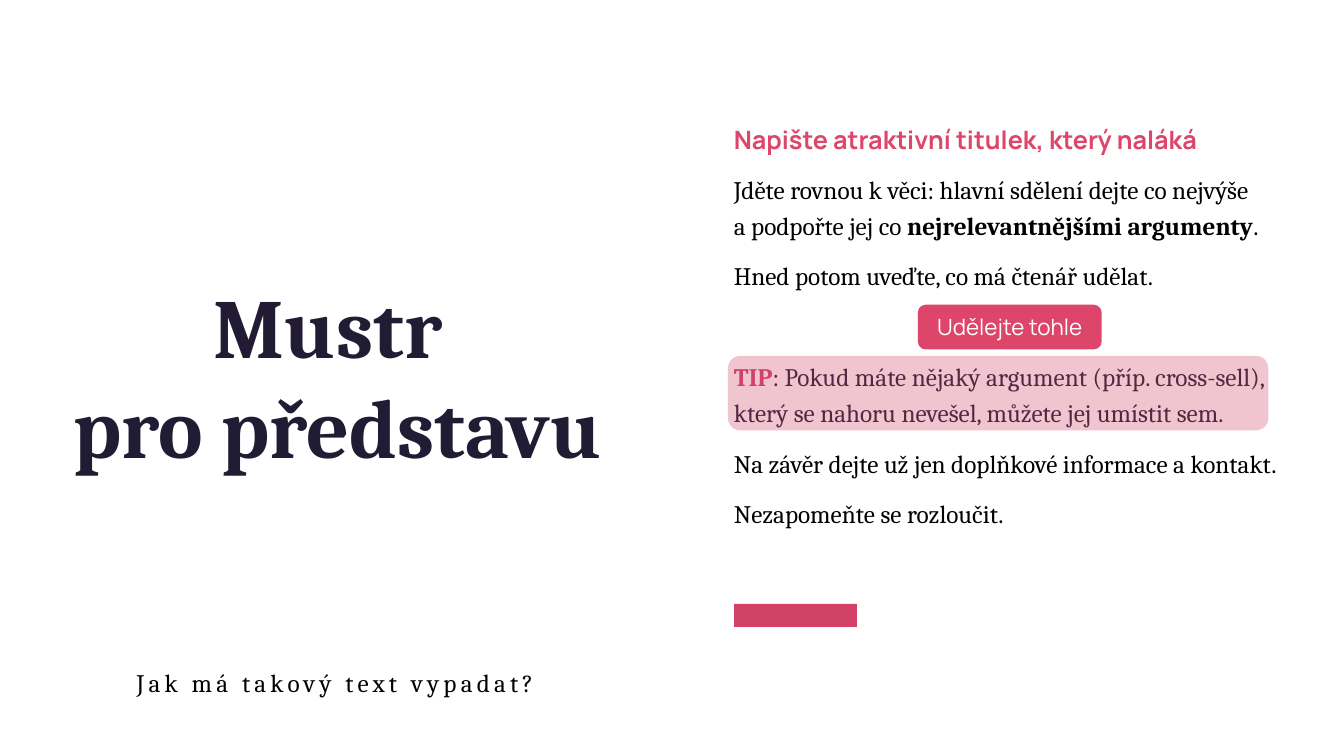
from dataclasses import dataclass

from lxml import etree
from pptx import Presentation
from pptx.dml.color import RGBColor
from pptx.enum.shapes import MSO_SHAPE as Shape
from pptx.enum.text import MSO_ANCHOR as Anchor, PP_ALIGN as Align
from pptx.oxml.ns import qn
from pptx.util import Inches, Pt

COLORS = {
    "pink": "DD456A",
    "rose": "D24166",
    "navy": "211C33",
    "ink": "201C33",
    "black": "000000",
    "white": "FFFFFF",
}


@dataclass(frozen=True)
class Run:
    text: str
    color: str = "black"
    bold: bool = False
    size: float = 18
    font: str = "Cambria"
    tracking: float = 0


@dataclass(frozen=True)
class Para:
    runs: tuple[Run, ...]
    align: Align = Align.LEFT
    spacing: float = 1.2
    before: float = 10


@dataclass(frozen=True)
class Box:
    left: float
    top: float
    width: float
    height: float
    paras: tuple[Para, ...] = ()
    anchor: Anchor = Anchor.TOP


@dataclass(frozen=True)
class Panel:
    box: Box
    color: str
    opacity: int = 100
    outlined: bool = False
    kind: Shape = Shape.ROUNDED_RECTANGLE


SECTION_GAP = 46  # one line more than the usual gap

TITLE = Box(0.49, 1, 5.71, 5.44, (
    Para((Run("Mustr \npro představu", "navy", True, 60),), Align.CENTER, 1, 0),
), Anchor.MIDDLE)

SUBTITLE = Box(0.49, 6.6, 5.67, 0.41, (
    Para((Run("Jak má takový text vypadat?", tracking=3),), Align.CENTER, 0.9, 0),
))

SAMPLE = Box(7.18, 1.03, 5.67, 5.98, (
    Para((Run("Napište atraktivní titulek, který naláká", "pink", True, font="Manrope"),),
         spacing=1.5, before=0),
    Para((Run("Jděte rovnou k věci: hlavní sdělení dejte co nejvýše \na podpořte jej co "),
          Run("nejrelevantnějšími argumenty", bold=True),
          Run("."))),
    Para((Run("Hned potom uveďte, co má čtenář udělat."),)),
    Para((Run("TIP", "rose", True),
          Run(": Pokud máte nějaký argument (příp. cross-sell),\n"
              "který se nahoru nevešel, můžete jej umístit sem.", "ink")),
         before=SECTION_GAP),
    Para((Run("Na závěr dejte už jen doplňkové informace a kontakt."),)),
    Para((Run("Nezapomeňte se rozloučit."),)),
))

TIP_PANEL = Panel(Box(7.22, 3.53, 5.36, 0.74), "rose", opacity=30)

SIGNATURE = Panel(Box(7.28, 5.99, 1.22, 0.23), "rose", kind=Shape.RECTANGLE)

BUTTON = Panel(Box(9.11, 3.03, 1.81, 0.43, (
    Para((Run("Udělejte tohle", "white", size=16, font="Manrope"),), Align.CENTER, 1, 0),
), Anchor.MIDDLE), "pink", outlined=True)


def rgb(name: str) -> RGBColor:
    return RGBColor.from_string(COLORS[name])


def bounds(box: Box) -> tuple:
    return tuple(Inches(v) for v in (box.left, box.top, box.width, box.height))


def add_run(p, run: Run) -> None:
    """Add the run's text, with a line break at each newline."""
    for i, line in enumerate(run.text.split("\n")):
        if i:
            p.add_line_break()
        r = p.add_run()
        r.text = line
        formats = {"name": run.font, "size": Pt(run.size), "bold": run.bold}
        for key, value in formats.items():
            setattr(r.font, key, value)
        r.font.color.rgb = rgb(run.color)
        if run.tracking:
            r._r.get_or_add_rPr().set("spc", str(round(run.tracking * 100)))


def fill_text(tf, box: Box) -> None:
    tf.word_wrap = True
    tf.vertical_anchor = box.anchor
    for i, para in enumerate(box.paras):
        p = tf.add_paragraph() if i else tf.paragraphs[0]
        formats = {
            "alignment": para.align,
            "line_spacing": para.spacing,
            "space_before": Pt(para.before),
        }
        for key, value in formats.items():
            setattr(p, key, value)
        for run in para.runs:
            add_run(p, run)


def add_text(s, box: Box) -> None:
    fill_text(s.shapes.add_textbox(*bounds(box)).text_frame, box)


def add_panel(s, panel: Panel) -> None:
    sp = s.shapes.add_shape(panel.kind, *bounds(panel.box))
    sp.shadow.inherit = False
    sp.fill.solid()
    sp.fill.fore_color.rgb = rgb(panel.color)
    if panel.opacity < 100:
        color = sp._element.spPr.find(qn("a:solidFill")).find(qn("a:srgbClr"))
        etree.SubElement(color, qn("a:alpha")).set("val", str(panel.opacity * 1000))
    if panel.outlined:
        sp.line.color.rgb = rgb(panel.color)
        sp.line.width = Pt(1)
    else:
        sp.line.fill.background()
    fill_text(sp.text_frame, panel.box)


def main() -> None:
    prs = Presentation()
    prs.slide_width, prs.slide_height = Inches(13.33), Inches(7.5)
    s = prs.slides.add_slide(prs.slide_layouts[6])
    add_text(s, SAMPLE)
    add_panel(s, SIGNATURE)
    add_panel(s, TIP_PANEL)
    add_text(s, TITLE)
    add_text(s, SUBTITLE)
    add_panel(s, BUTTON)
    prs.save("out.pptx")


if __name__ == "__main__":
    main()
